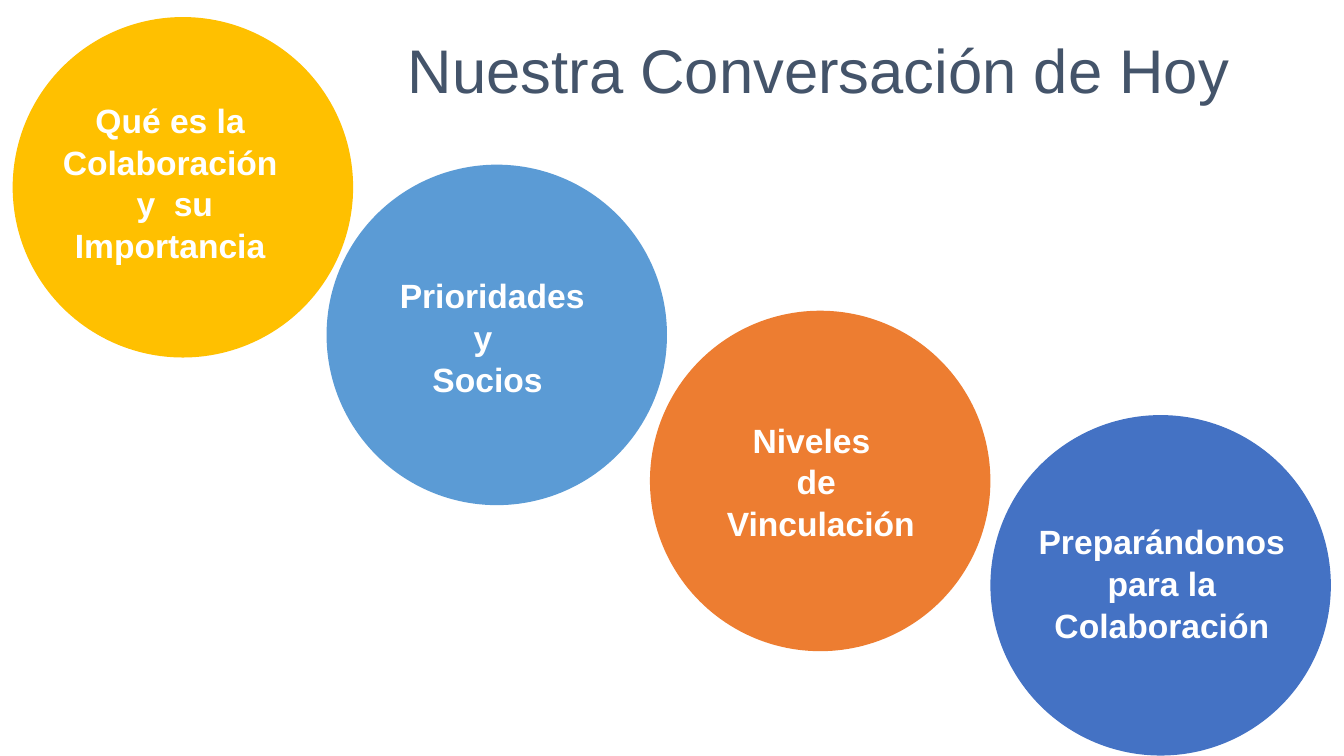
from dataclasses import dataclass

from pptx import Presentation
from pptx.dml.color import RGBColor
from pptx.enum.shapes import MSO_SHAPE
from pptx.enum.text import MSO_ANCHOR, PP_ALIGN
from pptx.util import Cm, Pt

OVAL = MSO_SHAPE.OVAL
CENTER = PP_ALIGN.CENTER
TOP, MIDDLE = MSO_ANCHOR.TOP, MSO_ANCHOR.MIDDLE


@dataclass(frozen=True)
class Theme:
    font: str = "Arial"
    title: str = "44546A"
    label: str = "FFFFFF"
    gold: str = "FFC000"
    blue: str = "5B9BD5"
    orange: str = "ED7D31"
    indigo: str = "4472C4"
    title_size: int = 44
    label_size: int = 24
    label_lead: float = 1.04


THEME = Theme()
DISC_SIZE = 8.58

TOPICS = [
    ((8.23, 4.15), THEME.blue, (1.57, 2.69, 5.21, 1.68),
     ["Prioridades y  ", "Socios "]),
    ((16.38, 7.83), THEME.orange, (0.84, 2.64, 6.93, 1.09),
     ["Niveles  ", "de ", "Vinculación"]),
    ((0.32, 0.43), THEME.gold, (0.81, 1.98, 6.55, 2.84),
     ["Qué es la  Colaboración  y  su Importancia "]),
    ((24.96, 10.46), THEME.indigo, (0.79, 2.57, 7.06, 1.42),
     ["Preparándonos para la Colaboración"]),
]


def add_text(slide, box, lines, size, color, bold, anchor, lead):
    frame = slide.shapes.add_textbox(*map(Cm, box)).text_frame
    frame.word_wrap = True
    frame.vertical_anchor = anchor
    frame.margin_left = frame.margin_right = Cm(0.13)
    frame.margin_top = frame.margin_bottom = Cm(0.06)
    for i, line in enumerate(lines):
        para = frame.add_paragraph() if i else frame.paragraphs[0]
        para.alignment = CENTER
        para.line_spacing = lead
        run = para.add_run()
        run.text = line
        run.font.name = THEME.font
        run.font.size = Pt(size)
        run.font.bold = bold
        run.font.color.rgb = RGBColor.from_string(color)


def add_title(slide, box):
    add_text(slide, box, ["Nuestra Conversación de Hoy "],
             THEME.title_size, THEME.title, False, MIDDLE, 1.0)


def add_topic(slide, box, color, inset, lines):
    left, top, size = box
    disc = slide.shapes.add_shape(OVAL, Cm(left), Cm(top), Cm(size), Cm(size))
    disc.shadow.inherit = False
    disc.fill.solid()
    disc.fill.fore_color.rgb = RGBColor.from_string(color)
    disc.line.fill.background()
    dx, dy, width, height = inset
    add_text(slide, (left + dx, top + dy, width, height), lines,
             THEME.label_size, THEME.label, True, TOP, THEME.label_lead)


def main():
    deck = Presentation()
    deck.slide_width, deck.slide_height = Cm(33.87), Cm(19.05)
    slide = deck.slides.add_slide(deck.slide_layouts[6])
    for (left, top), color, inset, lines in TOPICS:
        add_topic(slide, (left, top, DISC_SIZE), color, inset, lines)
    add_title(slide, (8.51, 0.66, 24.69, 2.16))
    deck.save("out.pptx")


if __name__ == "__main__":
    main()
